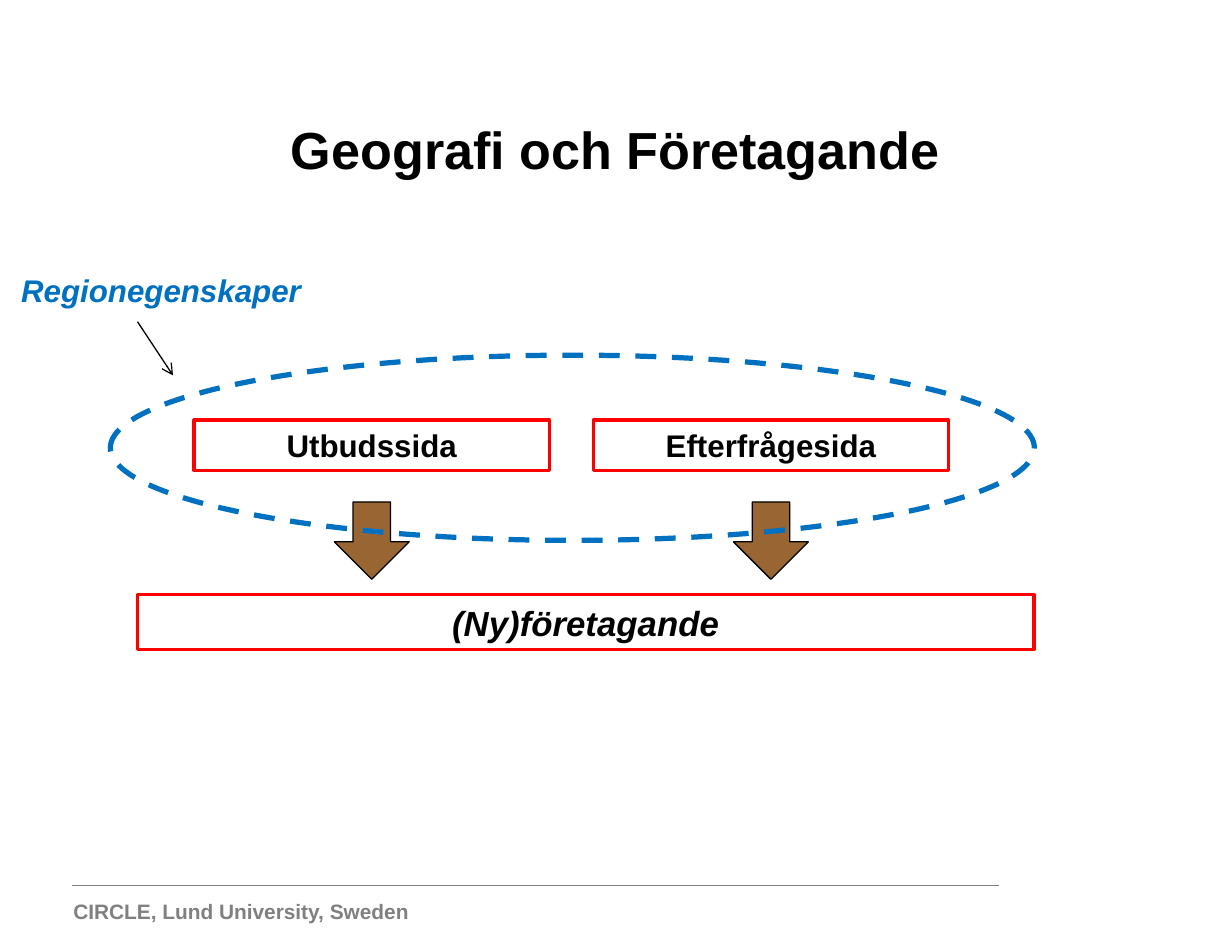
from lxml import etree
from pptx import Presentation
from pptx.dml.color import RGBColor
from pptx.enum.dml import MSO_LINE
from pptx.enum.shapes import MSO_CONNECTOR, MSO_SHAPE
from pptx.enum.text import MSO_ANCHOR as Anchor, MSO_AUTO_SIZE as AutoSize, PP_ALIGN as Align
from pptx.oxml.ns import qn
from pptx.util import Cm, Pt

BLACK = RGBColor(0x00, 0x00, 0x00)
GREY = RGBColor(0x80, 0x80, 0x80)
RED = RGBColor(0xFF, 0x00, 0x00)
BLUE = RGBColor(0x00, 0x70, 0xC0)
BROWN = RGBColor(0x99, 0x66, 0x33)


def write(shape, text, size, color=BLACK, italic=False, align=Align.CENTER, wrap=True):
    text_frame = shape.text_frame
    text_frame.text = text
    text_frame.word_wrap = wrap
    text_frame.auto_size = AutoSize.NONE
    text_frame.vertical_anchor = Anchor.MIDDLE
    paragraph = text_frame.paragraphs[0]
    paragraph.alignment = align
    font = paragraph.runs[0].font
    font.name = "Arial"
    font.size = Pt(size)
    font.bold = True
    font.italic = italic
    font.color.rgb = color


def add_outline(slide, kind, box, color, width, fill=None):
    shape = slide.shapes.add_shape(kind, *map(Cm, box))
    shape.shadow.inherit = False
    if fill is None:
        shape.fill.background()
    else:
        shape.fill.solid()
        shape.fill.fore_color.rgb = fill
    shape.line.color.rgb = color
    shape.line.width = Pt(width)
    return shape


def add_line(slide, start, end, color, width):
    line = slide.shapes.add_connector(MSO_CONNECTOR.STRAIGHT, *map(Cm, start + end))
    line.line.color.rgb = color
    line.line.width = Pt(width)
    etree.SubElement(line._element.spPr, qn("a:effectLst"))
    return line


def add_label(slide, box, text, size, color, italic=False, wrap=True):
    label = slide.shapes.add_textbox(*map(Cm, box))
    write(label, text, size, color, italic, Align.LEFT, wrap)


def add_title(slide, box, text):
    title = slide.shapes.title
    title.left, title.top, title.width, title.height = map(Cm, box)
    write(title, text, 30)


def add_footer(slide, box):
    left, top, width, height = box
    add_line(slide, (left + 0.23, top), (left + width, top), GREY, 0.5)
    add_label(slide, (left, top + 0.13, 7.39, height - 0.13),
              "CIRCLE, Lund University, Sweden", 12, GREY, wrap=False)


def add_flow(slide, box):
    left, top, width, height = box
    side_width, side_height, step = 7.21, 1.02, 8.1
    arrow_width, arrow_height = 1.52, 1.57
    result_height = 1.12
    for index, text in enumerate(("Utbudssida", "Efterfrågesida")):
        side_left = left + 1.15 + index * step
        side = add_outline(slide, MSO_SHAPE.RECTANGLE,
                           (side_left, top, side_width, side_height), RED, 2)
        write(side, text, 18)
        arrow_left = side_left + (side_width - arrow_width) / 2
        add_outline(slide, MSO_SHAPE.DOWN_ARROW,
                    (arrow_left, top + 1.66, arrow_width, arrow_height), BLACK, 0.75, BROWN)
    result = add_outline(slide, MSO_SHAPE.RECTANGLE,
                         (left, top + height - result_height, width, result_height), RED, 2)
    write(result, "(Ny)företagande", 20, italic=True)


def add_region(slide, box):
    left, top, width, height = box
    ellipse = add_outline(slide, MSO_SHAPE.OVAL, box, BLUE, 3)
    ellipse.line.dash_style = MSO_LINE.DASH
    pointer = add_line(slide, (left + 0.55, top - 0.68), (left + 1.27, top + 0.41), BLACK, 0.75)
    etree.SubElement(pointer.line._get_or_add_ln(), qn("a:tailEnd"), type="arrow")
    add_label(slide, (left - 2.06, top - 1.83, 6.27, 1.02), "Regionegenskaper", 18, BLUE, True)


def main():
    presentation = Presentation()
    presentation.slide_width = Cm(25)
    presentation.slide_height = Cm(19)
    slide = presentation.slides.add_slide(presentation.slide_layouts[5])
    add_footer(slide, (1.24, 17.98, 19.03, 0.89))
    add_title(slide, (1.24, 1.42, 22.5, 3.18), "Geografi och Företagande")
    add_flow(slide, (2.79, 8.53, 18.19, 4.66))
    add_region(slide, (2.24, 7.21, 18.75, 3.76))
    presentation.save("out.pptx")


if __name__ == "__main__":
    main()
